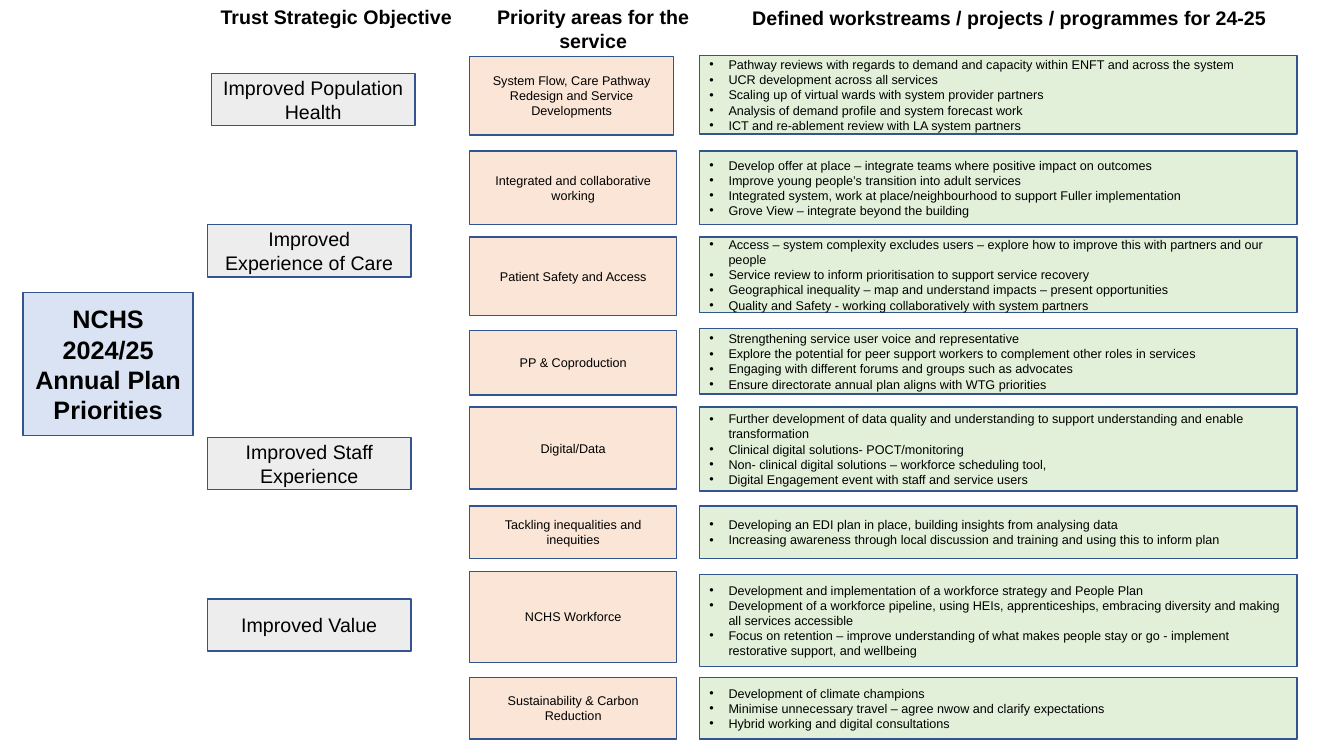
from lxml.etree import SubElement
from pptx import Presentation
from pptx.dml.color import RGBColor
from pptx.enum.shapes import MSO_SHAPE as Shape
from pptx.enum.text import MSO_ANCHOR as Anchor, PP_ALIGN as Align
from pptx.oxml.ns import qn
from pptx.util import Cm, Pt


def color(value):
    return RGBColor.from_string(value)


def add_box(page, place, lines, size, fill=None, bold=False, bullets=False):
    """Add a bordered box, or a plain text box when there is no fill."""
    lengths = [Cm(value) for value in place]
    if fill:
        box = page.shapes.add_shape(Shape.RECTANGLE, *lengths)
        box.shadow.inherit = False
        box.fill.solid()
        box.fill.fore_color.rgb = color(fill)
        box.line.color.rgb = color("325491")
        box.line.width = Pt(1)
    else:
        box = page.shapes.add_textbox(*lengths)
    frame = box.text_frame
    frame.word_wrap = True
    frame.vertical_anchor = Anchor.MIDDLE if fill else Anchor.TOP
    font_format = {"name": "Arial", "size": Pt(size), "bold": bold}
    for number, line in enumerate(lines):
        para = frame.add_paragraph() if number else frame.paragraphs[0]
        para.alignment = Align.LEFT if bullets else Align.CENTER
        span = para.add_run()
        span.text = line
        for name, value in font_format.items():
            setattr(span.font, name, value)
        span.font.color.rgb = color("000000")
        if bullets:
            properties = para._p.get_or_add_pPr()
            properties.set("marL", str(Cm(0.48)))
            properties.set("indent", str(-Cm(0.48)))
            SubElement(properties, qn("a:buFont")).set("typeface", "Arial")
            SubElement(properties, qn("a:buChar")).set("char", "•")


deck = Presentation()
deck.slide_width, deck.slide_height = Cm(33.87), Cm(19.05)
page = deck.slides.add_slide(deck.slide_layouts[6])

# Plan name
add_box(page, (0.58, 7.37, 4.29, 3.61), ["NCHS 2024/25 Annual Plan Priorities"],
        18, "DAE3F3", bold=True)

# Strategic objectives: left, top, text
objectives = [
    (5.33, 1.85, "Improved Population Health"),
    (5.23, 5.66, "Improved Experience of Care"),
    (5.23, 11.02, "Improved Staff Experience"),
    (5.23, 15.09, "Improved Value"),
]
for left, top, text in objectives:
    add_box(page, (left, top, 5.13, 1.32), [text], 14, "EDEDED")

# Priority (top, height, width), its name, workstreams (top, height), their lines
rows = [
    ((1.42, 1.98, 5.13), "System Flow, Care Pathway Redesign and Service Developments",
     (1.4, 1.98), [
        "Pathway reviews with regards to demand and capacity within ENFT and across the system",
        "UCR development across all services",
        "Scaling up of virtual wards with system provider partners",
        "Analysis of demand profile and system forecast work",
        "ICT and re-ablement review with LA system partners"]),
    ((3.81, 1.85, 5.21), "Integrated and collaborative working",
     (3.81, 1.85), [
        "Develop offer at place – integrate teams where positive impact on outcomes",
        "Improve young people’s transition into adult services",
        "Integrated system, work at place/neighbourhood to support Fuller implementation",
        "Grove View – integrate beyond the building"]),
    ((5.97, 1.98, 5.21), "Patient Safety and Access",
     (5.97, 1.91), [
        "Access – system complexity excludes users – explore how to improve this with "
        "partners and our people",
        "Service review to inform prioritisation to support service recovery",
        "Geographical inequality – map and understand impacts – present opportunities",
        "Quality and Safety - working collaboratively with system partners"]),
    ((8.33, 1.63, 5.21), "PP & Coproduction",
     (8.28, 1.65), [
        "Strengthening service user voice and representative",
        "Explore the potential for peer support workers to complement other roles in services",
        "Engaging with different forums and groups such as advocates",
        "Ensure directorate annual plan aligns with WTG priorities"]),
    ((10.26, 2.06, 5.21), "Digital/Data",
     (10.26, 2.11), [
        "Further development of data quality and understanding to support understanding "
        "and enable transformation",
        "Clinical digital solutions- POCT/monitoring",
        "Non- clinical digital solutions – workforce scheduling tool,",
        "Digital Engagement event with staff and service users"]),
    ((12.75, 1.32, 5.21), "Tackling inequalities and inequities",
     (12.75, 1.32), [
        "Developing an EDI plan in place, building insights from analysing data",
        "Increasing awareness through local discussion and training and using this to "
        "inform plan"]),
    ((14.4, 2.29, 5.21), "NCHS Workforce",
     (14.48, 2.31), [
        "Development and implementation of a workforce strategy and People Plan",
        "Development of a workforce pipeline, using HEIs, apprenticeships, embracing "
        "diversity and making all services accessible",
        "Focus on retention – improve understanding of what makes people stay or go - "
        "implement restorative support, and wellbeing"]),
    ((17.07, 1.55, 5.21), "Sustainability & Carbon Reduction",
     (17.07, 1.55), [
        "Development of climate champions",
        "Minimise unnecessary travel – agree nwow and clarify expectations",
        "Hybrid working and digital consultations"]),
]
for (top, height, width), priority, (work_top, work_height), workstreams in rows:
    add_box(page, (11.84, top, width, height), [priority], 9, "FBE5D6")
    add_box(page, (17.63, work_top, 15.06, work_height), workstreams, 9, "E2F0D9",
            bullets=True)

# Column headings
headings = [
    ((4.98, 0, 6.99, 0.86), "Trust Strategic Objective"),
    ((11.61, 0, 6.68, 1.45), "Priority areas for the service"),
    ((18.29, 0.03, 14.3, 0.86), "Defined workstreams / projects / programmes for 24-25"),
]
for place, text in headings:
    add_box(page, place, [text], 14, bold=True)

deck.save("out.pptx")
